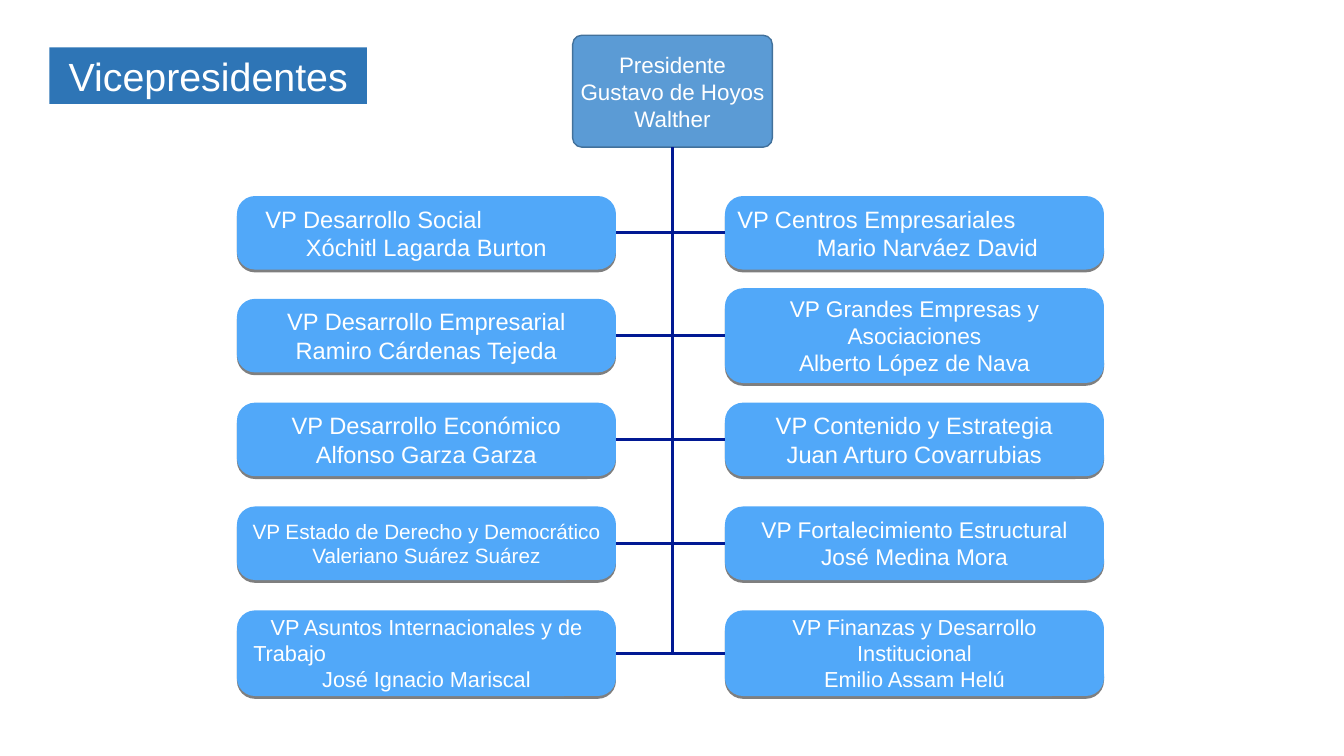
"""Build the vice-presidents organisation chart slide."""
from dataclasses import dataclass
from typing import Optional

import lxml.etree
import pptx
import pptx.dml.color
import pptx.enum.shapes
import pptx.enum.text
import pptx.oxml.ns
import pptx.util

Inches = pptx.util.Inches
ALIGN = pptx.enum.text.PP_ALIGN


@dataclass(frozen=True)
class Theme:
    font: str = "Arial"
    text: str = "FFFFFF"
    title_fill: str = "2E75B6"
    president_fill: str = "5B9BD5"
    president_line: str = "42719B"
    vp_fill: str = "51A8F9"
    link: str = "011993"
    shadow: str = "000000"
    title_size: float = 28.1
    president_size: float = 16
    large: float = 16.9
    medium: float = 16.2
    small: float = 15.5
    tiny: float = 14.8


@dataclass(frozen=True)
class Line:
    text: str
    indent: float = 0
    align: int = ALIGN.CENTER


@dataclass(frozen=True)
class Card:
    lines: tuple[Line, ...]
    size: float
    height: float = 0.73


@dataclass(frozen=True)
class Row:
    center: float
    left: Card
    right: Card


THEME = Theme()
CARD_WIDTH = 3.76
LEFT_X, RIGHT_X = 2.35, 7.19
CORNER = 0.18

PRESIDENT = (Line("Presidente"), Line("Gustavo de Hoyos Walther"))
ROWS = (
    Row(2.31,
        Card((Line("VP Desarrollo Social", 0.19, ALIGN.LEFT),
              Line("Xóchitl Lagarda Burton")), THEME.large),
        Card((Line("VP Centros Empresariales", 0.03, ALIGN.LEFT),
              Line("Mario Narváez David", 0.26)), THEME.large)),
    Row(3.33,
        Card((Line("VP Desarrollo Empresarial"),
              Line("Ramiro Cárdenas Tejeda")), THEME.large),
        Card((Line("VP Grandes Empresas y Asociaciones"),
              Line("Alberto López de Nava")), THEME.medium, 0.94)),
    Row(4.36,
        Card((Line("VP Desarrollo Económico"),
              Line("Alfonso Garza Garza")), THEME.large),
        Card((Line("VP Contenido y Estrategia"),
              Line("Juan Arturo Covarrubias")), THEME.large)),
    Row(5.39,
        Card((Line("VP Estado de Derecho y Democrático"),
              Line("Valeriano Suárez Suárez")), THEME.tiny),
        Card((Line("VP Fortalecimiento Estructural"),
              Line("José Medina Mora")), THEME.medium)),
    Row(6.48,
        Card((Line("VP Asuntos Internacionales y de"),
              Line("Trabajo", 0.07, ALIGN.LEFT),
              Line("José Ignacio Mariscal")), THEME.small, 0.85),
        Card((Line("VP Finanzas y Desarrollo Institucional"),
              Line("Emilio Assam Helú")), THEME.small, 0.85)),
)


def rgb(color: str) -> pptx.dml.color.RGBColor:
    """Return a colour from its hexadecimal code."""
    return pptx.dml.color.RGBColor.from_string(color)


def paint(sp, color: str) -> None:
    """Give a shape a solid fill."""
    sp.fill.solid()
    sp.fill.fore_color.rgb = rgb(color)


def write(sp, lines: tuple[Line, ...], size: float) -> None:
    """Write lines of white text into a shape."""
    tf = sp.text_frame
    tf.word_wrap = True
    tf.auto_size = pptx.enum.text.MSO_AUTO_SIZE.NONE
    tf.vertical_anchor = pptx.enum.text.MSO_ANCHOR.MIDDLE
    tf.margin_left = tf.margin_right = Inches(0.04)
    tf.margin_top = tf.margin_bottom = Inches(0.04)
    tf.text = "\n".join(line.text for line in lines)
    for p, line in zip(tf.paragraphs, lines):
        p.alignment = line.align
        if line.indent:
            p._p.get_or_add_pPr().set("marL", str(Inches(line.indent)))
        for r in p.runs:
            r.font.name = THEME.font
            r.font.size = pptx.util.Pt(size)
            r.font.color.rgb = rgb(THEME.text)


def add_box(slide, x: float, y: float, width: float, height: float,
            corner: float, fill: str):
    """Add a filled rounded rectangle without shadow or outline."""
    sp = slide.shapes.add_shape(
        pptx.enum.shapes.MSO_SHAPE.ROUNDED_RECTANGLE,
        Inches(x), Inches(y), Inches(width), Inches(height))
    sp.adjustments[0] = corner / height
    sp.shadow.inherit = False
    paint(sp, fill)
    sp.line.fill.background()
    return sp


def add_drop_shadow(sp) -> None:
    """Cast a hard half-transparent shadow below a shape."""
    qn = pptx.oxml.ns.qn
    effects = sp._element.spPr.find(qn("a:effectLst"))
    shadow = lxml.etree.SubElement(
        effects, qn("a:outerShdw"), blurRad="0",
        dist=str(pptx.util.Pt(2)), dir="5400000", rotWithShape="0")
    color = lxml.etree.SubElement(shadow, qn("a:srgbClr"), val=THEME.shadow)
    lxml.etree.SubElement(color, qn("a:alpha"), val="50000")


def add_card(slide, card: Card, x: float, center: float):
    """Add one vice-president card centred on its row."""
    sp = add_box(slide, x, center - card.height / 2, CARD_WIDTH,
                 card.height, CORNER, THEME.vp_fill)
    add_drop_shadow(sp)
    write(sp, card.lines, card.size)
    return sp


def add_link(slide, start, site: int, end_x: float, end_y: float,
             end: Optional[object] = None) -> None:
    """Link a box to a point, or to the left side of another box."""
    link = slide.shapes.add_connector(
        pptx.enum.shapes.MSO_CONNECTOR.STRAIGHT,
        0, 0, Inches(end_x), Inches(end_y))
    link.begin_connect(start, site)
    if end is not None:
        link.end_connect(end, 1)
    link.line.color.rgb = rgb(THEME.link)
    link.line.width = pptx.util.Pt(2)
    lxml.etree.SubElement(link._element.spPr,
                          pptx.oxml.ns.qn("a:effectLst"))


def main() -> None:
    """Create the presentation and save it."""
    prs = pptx.Presentation()
    prs.slide_width, prs.slide_height = Inches(13.33), Inches(7.5)
    slide = prs.slides.add_slide(prs.slide_layouts[5])

    title = slide.shapes.title
    title.left, title.top = Inches(0.49), Inches(0.47)
    title.width, title.height = Inches(3.15), Inches(0.56)
    paint(title, THEME.title_fill)
    write(title, (Line("Vicepresidentes"),), THEME.title_size)

    president = add_box(slide, 5.68, 0.35, 1.98, 1.11, 0.09,
                        THEME.president_fill)
    president.line.color.rgb = rgb(THEME.president_line)
    president.line.width = pptx.util.Pt(1)
    write(president, PRESIDENT, THEME.president_size)

    for row in ROWS:
        left = add_card(slide, row.left, LEFT_X, row.center)
        right = add_card(slide, row.right, RIGHT_X, row.center)
        add_link(slide, left, 3, RIGHT_X, row.center, right)
    add_link(slide, president, 2, 6.67, ROWS[-1].center)

    prs.save("out.pptx")


if __name__ == "__main__":
    main()
